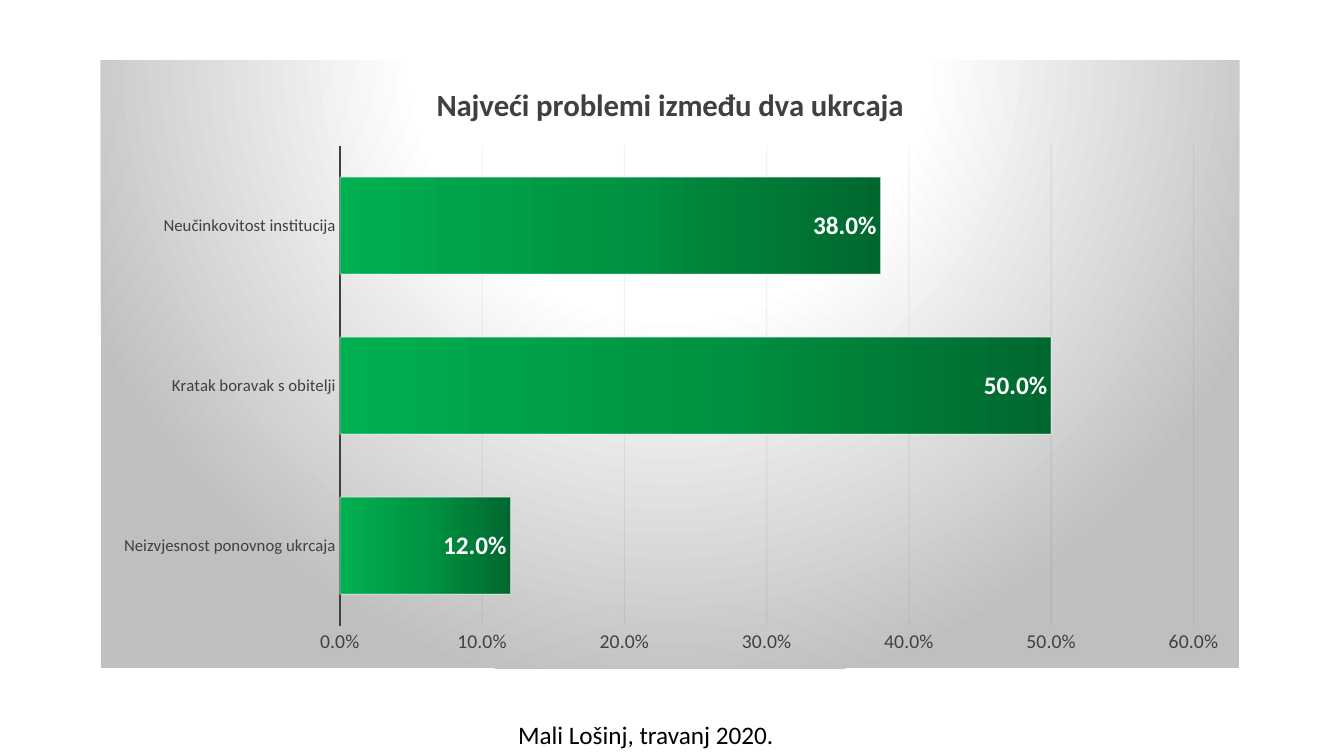
from lxml import etree
from pptx import Presentation
from pptx import util as u
from pptx.chart.data import CategoryChartData
from pptx.dml.color import RGBColor
from pptx.enum import chart as kinds
from pptx.oxml import parse_xml
from pptx.oxml.ns import nsdecls, qn

# Content
TITLE = "Najveći problemi između dva ukrcaja"
FOOTER = "Mali Lošinj, travanj 2020."
PROBLEMS = [
    ("Neizvjesnost ponovnog ukrcaja", 0.12),
    ("Kratak boravak s obitelji", 0.50),
    ("Neučinkovitost institucija", 0.38),
]
PERCENT = "0.0%"

# Places in inches: left, top, width, height; the plot is in shares of the chart
CHART_AT = (1, 0.6, 11.29, 6.03)
FOOTER_AT = (5.04, 7.09, 2.76, 0.4)
PLOT_AT = {"x": 0.21, "y": 0.14, "w": 0.75, "h": 0.79}

THEME = {
    "font": "Calibri",
    "text": "404040", "footer": "000000", "label": "FFFFFF", "grid": "0D0D0D",
    "title_size": 22, "label_size": 18, "footer_size": 18,
    "category_size": 12, "value_size": 14,
    "bar": [(0, "00682F"), (50, "009443"), (100, "00B050")],
    "panel": [(0, "FFFFFF"), (39, "FFFFFF"), (100, "BFBFBF")],
}
BAR_SHADE = '<a:lin ang="10800000" scaled="1"/>'
PANEL_SHADE = ('<a:path path="circle"><a:fillToRect l="50000" t="-80000" '
               'r="50000" b="180000"/></a:path>')


def colour(name):
    return RGBColor.from_string(THEME[name])


def style_font(font, size, shade, bold=False):
    font.name = THEME["font"]
    font.size = u.Pt(THEME[size])
    font.bold = bold
    font.color.rgb = colour(shade)


def style_line(line, shade, width, opacity=100):
    line.width = u.Pt(width)
    line.color.rgb = colour(shade)
    if opacity < 100:
        rgb = line._ln.find(".//" + qn("a:srgbClr"))
        etree.SubElement(rgb, qn("a:alpha"), val=str(opacity * 1000))


def gradient(stops, shade):
    marks = "".join(f'<a:gs pos="{at * 1000}"><a:srgbClr val="{rgb}"/></a:gs>'
                    for at, rgb in stops)
    return (f'<a:gradFill {nsdecls("a")} rotWithShape="1">'
            f'<a:gsLst>{marks}</a:gsLst>{shade}</a:gradFill>')


deck = Presentation()
deck.slide_width, deck.slide_height = u.Inches(13.33), u.Inches(7.5)
page = deck.slides.add_slide(deck.slide_layouts[6])

# Bar chart
data = CategoryChartData(number_format=PERCENT)
data.categories = [name for name, _ in PROBLEMS]
data.add_series("Series 1", [share for _, share in PROBLEMS])
chart = page.shapes.add_chart(kinds.XL_CHART_TYPE.BAR_CLUSTERED,
                              *map(u.Inches, CHART_AT), data).chart
chart.has_legend = False
chart.font.name = THEME["font"]
chart.font.size = u.Pt(10)

# Title
chart.has_title = True
chart.chart_title.include_in_layout = False
heading = chart.chart_title.text_frame.paragraphs[0]
heading.text = TITLE
style_font(heading.font, "title_size", "text", bold=True)

# Panel behind the chart
chart_part = chart._chartSpace.find(qn("c:chart"))
chart_part.addnext(parse_xml(
    f'<c:spPr {nsdecls("c", "a")}>{gradient(THEME["panel"], PANEL_SHADE)}'
    '<a:ln><a:noFill/></a:ln></c:spPr>'))

# Plot area
plot_area = chart_part.find(qn("c:plotArea"))
for layout in plot_area.findall(qn("c:layout")):
    plot_area.remove(layout)
layout = etree.Element(qn("c:layout"))
plot_area.insert(0, layout)
manual = etree.SubElement(layout, qn("c:manualLayout"))
etree.SubElement(manual, qn("c:layoutTarget"), val="inner")
for side in "xy":
    etree.SubElement(manual, qn(f"c:{side}Mode"), val="edge")
for side, share in PLOT_AT.items():
    etree.SubElement(manual, qn(f"c:{side}"), val=str(share))

# Axes
categories, values = chart.category_axis, chart.value_axis
for axis, size in ((categories, "category_size"), (values, "value_size")):
    axis.major_tick_mark = axis.minor_tick_mark = kinds.XL_TICK_MARK.NONE
    style_font(axis.tick_labels.font, size, "text")
categories.has_major_gridlines = False
style_line(categories.format.line, "text", 1.5)
values.minimum_scale, values.maximum_scale, values.major_unit = 0, 0.6, 0.1
values.tick_labels.number_format = PERCENT
values.tick_labels.number_format_is_linked = False
values.format.line.fill.background()
values.has_major_gridlines = True
style_line(values.major_gridlines.format.line, "grid", 0.75, opacity=5)

# Bars and their labels
plot = chart.plots[0]
plot.gap_width = 65
plot.vary_by_categories = False
bars = plot.series[0]
bars.invert_if_negative = False
style_line(bars.format.line, "label", 0.75, opacity=50)
bars._element.get_or_add_spPr().insert(
    0, parse_xml(gradient(THEME["bar"], BAR_SHADE)))
labels = bars.data_labels
labels.show_value = True
labels.number_format = PERCENT
labels.number_format_is_linked = False
labels.position = kinds.XL_LABEL_POSITION.INSIDE_END
style_font(labels.font, "label_size", "label", bold=True)

# Place and date
box = page.shapes.add_textbox(*map(u.Inches, FOOTER_AT))
box.text_frame.word_wrap = False
para = box.text_frame.paragraphs[0]
para.text = FOOTER
style_font(para.font, "footer_size", "footer")

deck.save("out.pptx")
